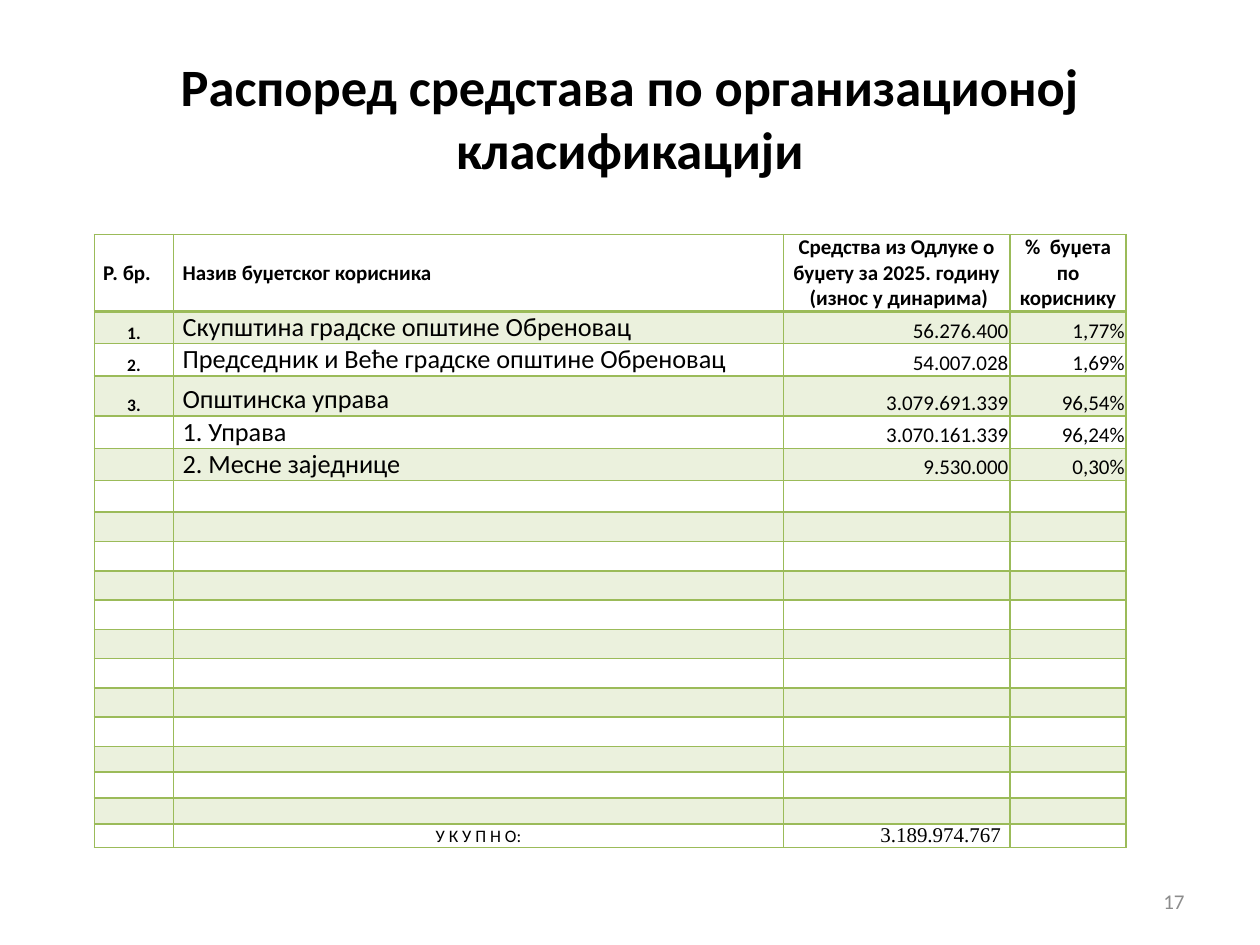
from lxml import etree
from pptx import Presentation
from pptx.dml.color import RGBColor
from pptx.enum.text import MSO_ANCHOR, PP_ALIGN
from pptx.oxml.ns import qn
from pptx.util import Cm, Pt

LEFT, CENTER, RIGHT = PP_ALIGN.LEFT, PP_ALIGN.CENTER, PP_ALIGN.RIGHT
MIDDLE, BOTTOM = MSO_ANCHOR.MIDDLE, MSO_ANCHOR.BOTTOM
TITLE_ONLY = 5

COLORS = {"text": "000000", "green": "9BBB59", "number": "8C8C8C"}

HEADINGS = [
    ("Р. бр.", LEFT),
    ("Назив буџетског корисника", LEFT),
    ("Средства из Одлуке о буџету за 2025. годину  (износ у динарима)", CENTER),
    ("%  буџета по кориснику", CENTER),
]
BENEFICIARIES = [
    ("1.", "Скупштина градске општине Обреновац", "56.276.400", "1,77%"),
    ("2.", "Председник и Веће градске општине Обреновац", "54.007.028", "1,69%"),
    ("3.", "Општинска управа", "3.079.691.339", "96,54%"),
    ("", "1. Управа", "3.070.161.339", "96,24%"),
    ("", "2. Месне заједнице", "9.530.000", "0,30%"),
]
BENEFICIARY_FORMATS = [
    dict(size=10, bold=True, align=CENTER),
    dict(size=15),
    dict(size=12, align=RIGHT),
    dict(size=12, align=RIGHT),
]
COLUMN_WIDTHS = [1.6, 12.29, 4.57, 2.34]
ROW_HEIGHTS = [1.55, 0.64, 0.64, 0.81] + [0.64] * 3 + [0.59] * 8 + [0.52] * 3 + [0.48]


def write(frame, text, size=12, bold=False, align=LEFT, color="text", font="Calibri"):
    paragraph = frame.paragraphs[0]
    paragraph.alignment = align
    if not text:
        # Keeps an empty cell from growing to the default text size
        etree.SubElement(paragraph._p, qn("a:endParaRPr"), sz=str(size * 100))
        return
    run = paragraph.add_run()
    run.text = text
    run.font.size = Pt(size)
    run.font.bold = bold
    run.font.name = font
    run.font.color.rgb = RGBColor.from_string(COLORS[color])


def set_borders(cell, bottom=1, top=1):
    properties = cell._tc.get_or_add_tcPr()
    for side, width in (("L", 1), ("R", 1), ("T", top), ("B", bottom)):
        line = etree.SubElement(properties, qn(f"a:ln{side}"), w=str(Pt(width)))
        fill = etree.SubElement(line, qn("a:solidFill"))
        etree.SubElement(fill, qn("a:srgbClr"), val=COLORS["green"])


def set_fill(cell, shaded):
    if not shaded:
        cell.fill.background()
        return
    cell.fill.solid()
    cell.fill.fore_color.rgb = RGBColor.from_string(COLORS["green"])
    tint = cell._tc.tcPr.find(qn("a:solidFill")).find(qn("a:srgbClr"))
    etree.SubElement(tint, qn("a:alpha"), val="20000")


def format_cell(cell, anchor, side_margin):
    cell.vertical_anchor = anchor
    cell.margin_left = cell.margin_right = Cm(side_margin)
    cell.margin_top = cell.margin_bottom = 0


def add_title(slide, left, top, width, height):
    title = slide.shapes.title
    title.left, title.top, title.width, title.height = map(Cm, (left, top, width, height))
    title.text_frame.vertical_anchor = MIDDLE
    write(title.text_frame, "Распоред средстава по организационој класификацији",
          size=30, bold=True, align=CENTER)


def add_budget_table(slide, left, top):
    rows, columns = len(ROW_HEIGHTS), len(COLUMN_WIDTHS)
    table = slide.shapes.add_table(
        rows, columns, Cm(left), Cm(top), Cm(sum(COLUMN_WIDTHS)), Cm(sum(ROW_HEIGHTS))
    ).table
    table.first_row = table.horz_banding = False
    for column, width in zip(table.columns, COLUMN_WIDTHS):
        column.width = Cm(width)
    for row, height in zip(table.rows, ROW_HEIGHTS):
        row.height = Cm(height)

    contents = {(0, c): (text, dict(bold=True, align=align))
                for c, (text, align) in enumerate(HEADINGS)}
    for r, beneficiary in enumerate(BENEFICIARIES, start=1):
        for c, text in enumerate(beneficiary):
            contents[r, c] = text, BENEFICIARY_FORMATS[c]
    total = rows - 1
    contents[total, 1] = "У К У П Н О:", dict(size=10, align=CENTER)
    contents[total, 2] = "3.189.974.767", dict(align=RIGHT, font="Times New Roman")

    for r in range(rows):
        for c in range(columns):
            cell = table.cell(r, c)
            is_figure = c >= 2 and 1 <= r <= len(BENEFICIARIES)
            format_cell(cell, BOTTOM if r else MIDDLE, 0.03 if is_figure else 0.18)
            set_borders(cell, bottom=1 if r else 2, top=2 if r == 1 else 1)
            set_fill(cell, shaded=r % 2 == 1)
            text, text_format = contents.get((r, c), ("", dict(size=10)))
            write(cell.text_frame, text, **text_format)


def add_slide_number(slide, left, top, width, height):
    frame = slide.shapes.add_textbox(Cm(left), Cm(top), Cm(width), Cm(height)).text_frame
    frame.word_wrap = True
    frame.vertical_anchor = MIDDLE
    write(frame, "17", align=RIGHT, color="number")


def main():
    presentation = Presentation()
    presentation.slide_width, presentation.slide_height = Cm(25.4), Cm(19.05)
    slide = presentation.slides.add_slide(presentation.slide_layouts[TITLE_ONLY])
    add_title(slide, 1.27, 0.76, 22.86, 3.18)
    add_budget_table(slide, 1.9, 4.73)
    add_slide_number(slide, 18.2, 17.66, 5.93, 1.01)
    presentation.save("out.pptx")


if __name__ == "__main__":
    main()
